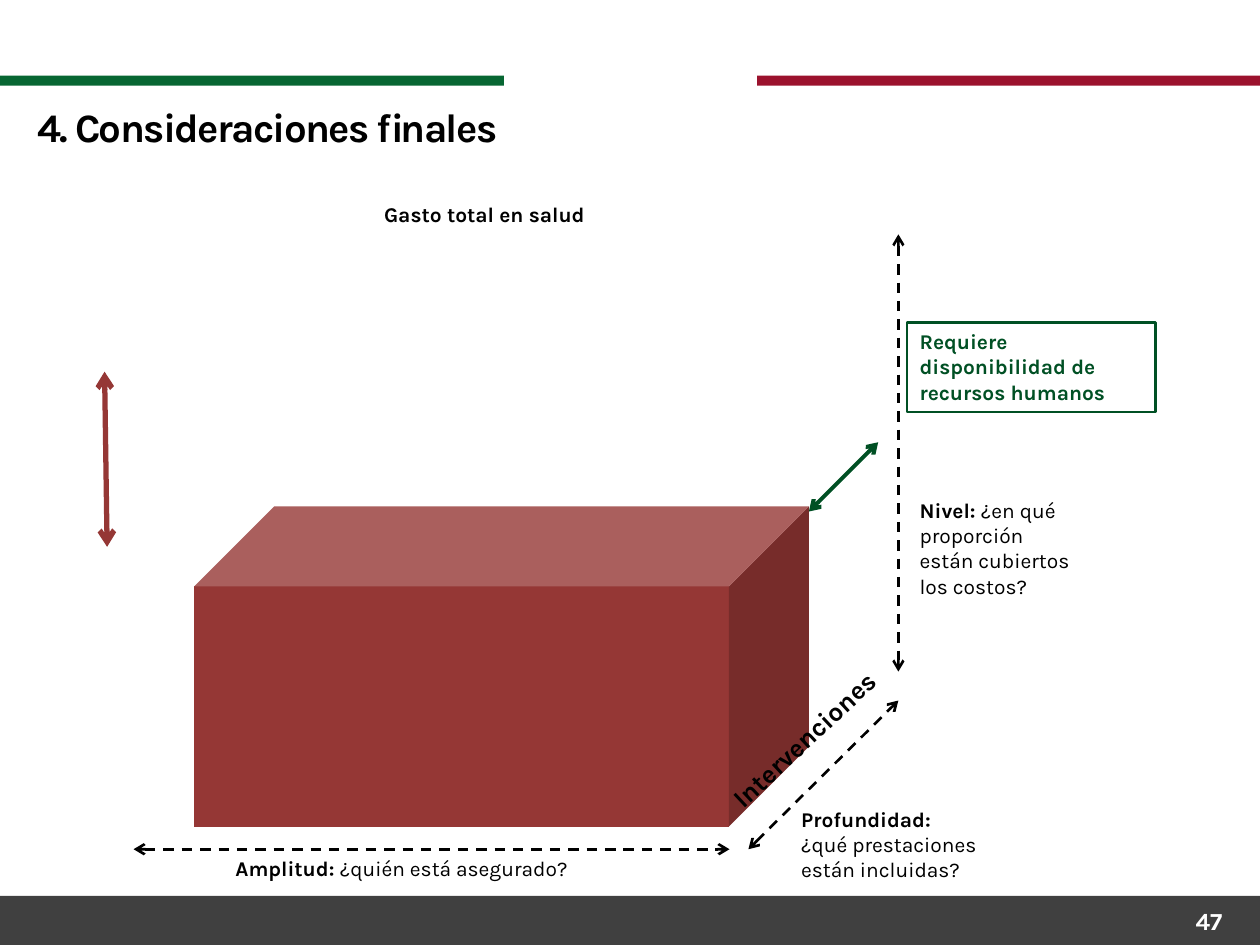
from dataclasses import dataclass
from typing import Optional

import pptx
import pptx.dml.color
import pptx.enum.dml
import pptx.enum.shapes
import pptx.enum.text
import pptx.oxml
import pptx.oxml.ns
import pptx.util
from pptx.util import Inches

COLORS = {
    "black": "000000",
    "white": "FFFFFF",
    "footer": "404040",
    "flag green": "076632",
    "flag red": "9B122D",
    "brick": "953735",
    "dark green": "005024",
}
FONT = "Karla"
SHAPES = pptx.enum.shapes.MSO_SHAPE
AUTO_SIZE = pptx.enum.text.MSO_AUTO_SIZE


@dataclass
class Block:
    left: float
    top: float
    width: float
    height: float
    color: str
    preset: SHAPES = SHAPES.RECTANGLE


@dataclass
class Label:
    """Each line is a (bold part, regular part) pair."""
    left: float
    top: float
    width: float
    height: float
    lines: list[tuple[str, str]]
    size: float = 12
    color: str = "black"
    wrap: bool = False
    grow: bool = True
    rotation: float = 0
    spacing: Optional[int] = None
    align_right: bool = False
    outline: Optional[str] = None


@dataclass
class Arrow:
    start: tuple[float, float]
    end: tuple[float, float]
    color: str = "black"
    weight: float = 1.5
    dashed: bool = True


BLOCKS = [
    Block(0, 7.11, 10.02, 0.39, "footer"),
    Block(0, 0.6, 4, 0.08, "flag green"),
    Block(6.01, 0.6, 4, 0.08, "flag red"),
    Block(1.54, 4.02, 4.88, 2.54, "brick", SHAPES.CUBE),
]
LABELS = [
    Label(0.2, 0.76, 9.61, 0.54, [("4. Consideraciones finales", "")],
          size=23, wrap=True, grow=False, spacing=-100),
    Label(2.95, 1.55, 2.36, 0.3, [("Gasto total en salud", "")], wrap=True),
    Label(1.77, 6.74, 3.19, 0.3, [("Amplitud: ", "¿quién está asegurado?")]),
    Label(7.2, 3.9, 1.59, 0.91,
          [("Nivel: ", "¿en qué"), ("", "proporción"),
           ("", "están cubiertos"), ("", "los costos?")]),
    Label(6.26, 6.35, 1.81, 0.71,
          [("Profundidad:", ""), ("", "¿qué prestaciones"),
           ("", "están incluidas?")]),
    Label(5.52, 5.62, 1.87, 0.35, [("Intervenciones", "")],
          size=15, rotation=317),
    Label(7.2, 2.56, 1.97, 0.71,
          [("Requiere disponibilidad de recursos humanos", "")],
          color="dark green", wrap=True, outline="dark green"),
    Label(7.47, 7.14, 2.33, 0.4, [("47", "")], size=14, color="white",
          wrap=True, grow=False, align_right=True),
]
ARROWS = [
    Arrow((0.83, 2.95), (0.85, 4.34), "brick", 3, dashed=False),
    Arrow((5.94, 6.74), (7.13, 5.56)),
    Arrow((1.06, 6.74), (5.79, 6.74)),
    Arrow((7.13, 1.86), (7.13, 5.33)),
    Arrow((6.42, 4.06), (6.97, 3.51), "dark green", 2.25, dashed=False),
]


def rgb(name: str) -> pptx.dml.color.RGBColor:
    return pptx.dml.color.RGBColor.from_string(COLORS[name])


def draw_block(slide: pptx.slide.Slide, block: Block) -> None:
    shape = slide.shapes.add_shape(
        block.preset, Inches(block.left), Inches(block.top),
        Inches(block.width), Inches(block.height))
    shape.shadow.inherit = False
    shape.fill.solid()
    shape.fill.fore_color.rgb = rgb(block.color)
    shape.line.fill.background()


def draw_label(slide: pptx.slide.Slide, label: Label) -> None:
    box = slide.shapes.add_textbox(
        Inches(label.left), Inches(label.top),
        Inches(label.width), Inches(label.height))
    box.rotation = label.rotation
    if label.outline:
        box.line.color.rgb = rgb(label.outline)
        box.line.width = pptx.util.Pt(1.5)
    frame = box.text_frame
    frame.word_wrap = label.wrap
    frame.auto_size = (AUTO_SIZE.SHAPE_TO_FIT_TEXT if label.grow
                       else AUTO_SIZE.NONE)
    for index, (bold_part, regular_part) in enumerate(label.lines):
        paragraph = frame.add_paragraph() if index else frame.paragraphs[0]
        if label.align_right:
            paragraph.alignment = pptx.enum.text.PP_ALIGN.RIGHT
        paragraph.font.name = FONT
        paragraph.font.size = pptx.util.Pt(label.size)
        paragraph.font.color.rgb = rgb(label.color)
        for words, bold in ((bold_part, True), (regular_part, False)):
            if words:
                run = paragraph.add_run()
                run.text = words
                run.font.bold = bold
                if label.spacing is not None:
                    run.font._element.set("spc", str(label.spacing))


def draw_arrow(slide: pptx.slide.Slide, arrow: Arrow) -> None:
    connector = slide.shapes.add_connector(
        pptx.enum.shapes.MSO_CONNECTOR.STRAIGHT,
        *map(Inches, arrow.start + arrow.end))
    connector.line.color.rgb = rgb(arrow.color)
    connector.line.width = pptx.util.Pt(arrow.weight)
    if arrow.dashed:
        connector.line.dash_style = pptx.enum.dml.MSO_LINE.DASH
    outline = connector.line._get_or_add_ln()
    for end in ("headEnd", "tailEnd"):
        outline.append(pptx.oxml.parse_xml(
            f'<a:{end} {pptx.oxml.ns.nsdecls("a")} type="arrow"/>'))
    connector._element.spPr.append(pptx.oxml.parse_xml(
        f'<a:effectLst {pptx.oxml.ns.nsdecls("a")}/>'))


def main() -> None:
    deck = pptx.Presentation()
    deck.slide_width, deck.slide_height = Inches(10), Inches(7.5)
    slide = deck.slides.add_slide(deck.slide_layouts[6])
    for block in BLOCKS:
        draw_block(slide, block)
    for label in LABELS:
        draw_label(slide, label)
    for arrow in ARROWS:
        draw_arrow(slide, arrow)
    deck.save("out.pptx")


if __name__ == "__main__":
    main()
